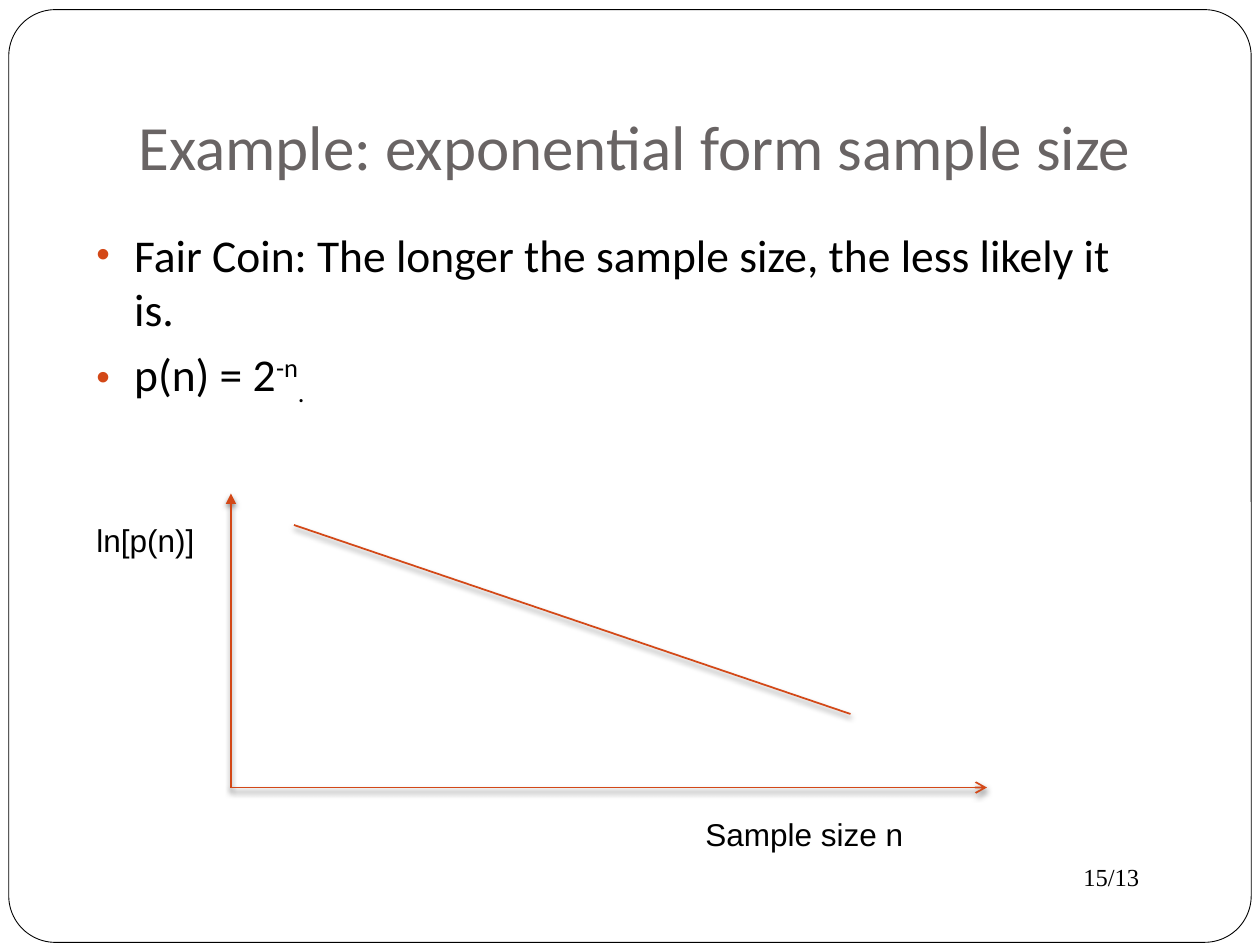
from dataclasses import dataclass, field

import lxml.etree
import pptx
import pptx.dml.color
import pptx.enum.shapes
import pptx.enum.text
import pptx.oxml
import pptx.oxml.ns
import pptx.util

Pt = pptx.util.Pt
ACCENT = "D34817"
BLACK = "000000"


@dataclass
class Run:
    text: str
    baseline: int = 0  # percent of the text size


@dataclass
class TextBlock:
    box: tuple[float, float, float, float]
    paragraphs: list[list[Run]]
    font: str
    size: float
    color: str = BLACK
    bulleted: bool = False
    frame_format: dict = field(default_factory=dict)


@dataclass
class GraphLine:
    start: tuple[float, float]
    end: tuple[float, float]
    arrow_tag: str = ""
    arrow_type: str = ""


def rgb(color: str) -> pptx.dml.color.RGBColor:
    return pptx.dml.color.RGBColor.from_string(color)


def set_all(target, values: dict) -> None:
    for name, value in values.items():
        setattr(target, name, value)


def append_xml(parent, tag: str, **attributes) -> lxml.etree._Element:
    """Add a DrawingML child with the given attributes."""
    child = lxml.etree.SubElement(parent, pptx.oxml.ns.qn(f"a:{tag}"))
    for name, value in attributes.items():
        child.set(name, str(value))
    return child


def add_bullet(paragraph) -> None:
    paragraph.space_before = Pt(5.8)
    properties = paragraph._p.get_or_add_pPr()
    indent = Pt(21.6)
    properties.set("marL", str(indent))
    properties.set("indent", str(-indent))
    append_xml(append_xml(properties, "buClr"), "srgbClr", val=ACCENT)
    append_xml(properties, "buSzPct", val=85000)
    append_xml(properties, "buFont", typeface="Arial")
    append_xml(properties, "buChar", char="•")


def draw_text(slide, block: TextBlock) -> None:
    frame = slide.shapes.add_textbox(*map(Pt, block.box)).text_frame
    set_all(frame, {"word_wrap": True} | block.frame_format)
    for index, runs in enumerate(block.paragraphs):
        paragraph = frame.add_paragraph() if index else frame.paragraphs[0]
        if block.bulleted:
            add_bullet(paragraph)
        for part in runs:
            run = paragraph.add_run()
            run.text = part.text
            set_all(run.font, {"name": block.font, "size": Pt(block.size)})
            run.font.color.rgb = rgb(block.color)
            if part.baseline:
                run._r.get_or_add_rPr().set("baseline", str(part.baseline * 1000))


def draw_line(slide, graph_line: GraphLine) -> None:
    connector = slide.shapes.add_connector(
        pptx.enum.shapes.MSO_CONNECTOR.STRAIGHT,
        *map(Pt, graph_line.start + graph_line.end),
    )
    connector.line.width = Pt(1)
    connector.line.color.rgb = rgb(ACCENT)
    if graph_line.arrow_tag:
        append_xml(connector.line._get_or_add_ln(), graph_line.arrow_tag,
                   type=graph_line.arrow_type)
    effects = append_xml(connector._element.spPr, "effectLst")
    shadow = append_xml(effects, "outerShdw", blurRad=Pt(3), dist=Pt(2),
                        dir=90 * 60000, rotWithShape=0)
    shadow_color = append_xml(shadow, "srgbClr", val=BLACK)
    append_xml(shadow_color, "alpha", val=50000)


def draw_border(slide) -> None:
    border = slide.shapes.add_shape(
        pptx.enum.shapes.MSO_SHAPE.ROUNDED_RECTANGLE,
        *map(Pt, (5, 5.5, 710, 533)),
    )
    border.adjustments[0] = 0.05
    border.shadow.inherit = False
    border.fill.solid()
    border.fill.fore_color.rgb = rgb("FFFFFF")
    border.line.color.rgb = rgb(BLACK)
    border.line.width = Pt(0.5)


PAGE_NUMBER = TextBlock((612, 489, 72, 24.5), [[Run("15/13")]], "Times New Roman", 14)
TITLE = TextBlock(
    (72, 21.6, 612, 90), [[Run("Example: exponential form sample size")]],
    "Calibri", 36, "696464",
    frame_format={"vertical_anchor": pptx.enum.text.MSO_ANCHOR.BOTTOM,
                  "margin_bottom": Pt(7.2)},
)
BODY = TextBlock(
    (48, 126, 612, 144),
    [
        [Run("Fair Coin: The longer the sample size, the less likely it is.")],
        [Run("p(n) = 2"), Run("-n", 30), Run(".", -25)],
    ],
    "Calibri", 26, bulleted=True,
)
VERTICAL_LABEL = TextBlock((48, 294, 71, 29), [[Run("ln[p(n)]")]], "Arial", 18,
                           frame_format={"word_wrap": False})
HORIZONTAL_LABEL = TextBlock((396, 462, 252, 29), [[Run("Sample size n")]], "Arial", 18)

ORIGIN = (132, 450)
GRAPH_LINES = [
    GraphLine((132, 282), ORIGIN, "headEnd", "triangle"),
    GraphLine(ORIGIN, (564, 450), "tailEnd", "arrow"),
    GraphLine((168, 300), (486, 408)),
]


def main() -> None:
    deck = pptx.Presentation()
    set_all(deck, {"slide_width": Pt(720), "slide_height": Pt(540)})
    slide = deck.slides.add_slide(deck.slide_layouts[6])
    draw_border(slide)
    for block in (PAGE_NUMBER, TITLE, BODY, VERTICAL_LABEL, HORIZONTAL_LABEL):
        draw_text(slide, block)
    for graph_line in GRAPH_LINES:
        draw_line(slide, graph_line)
    deck.save("out.pptx")


if __name__ == "__main__":
    main()
